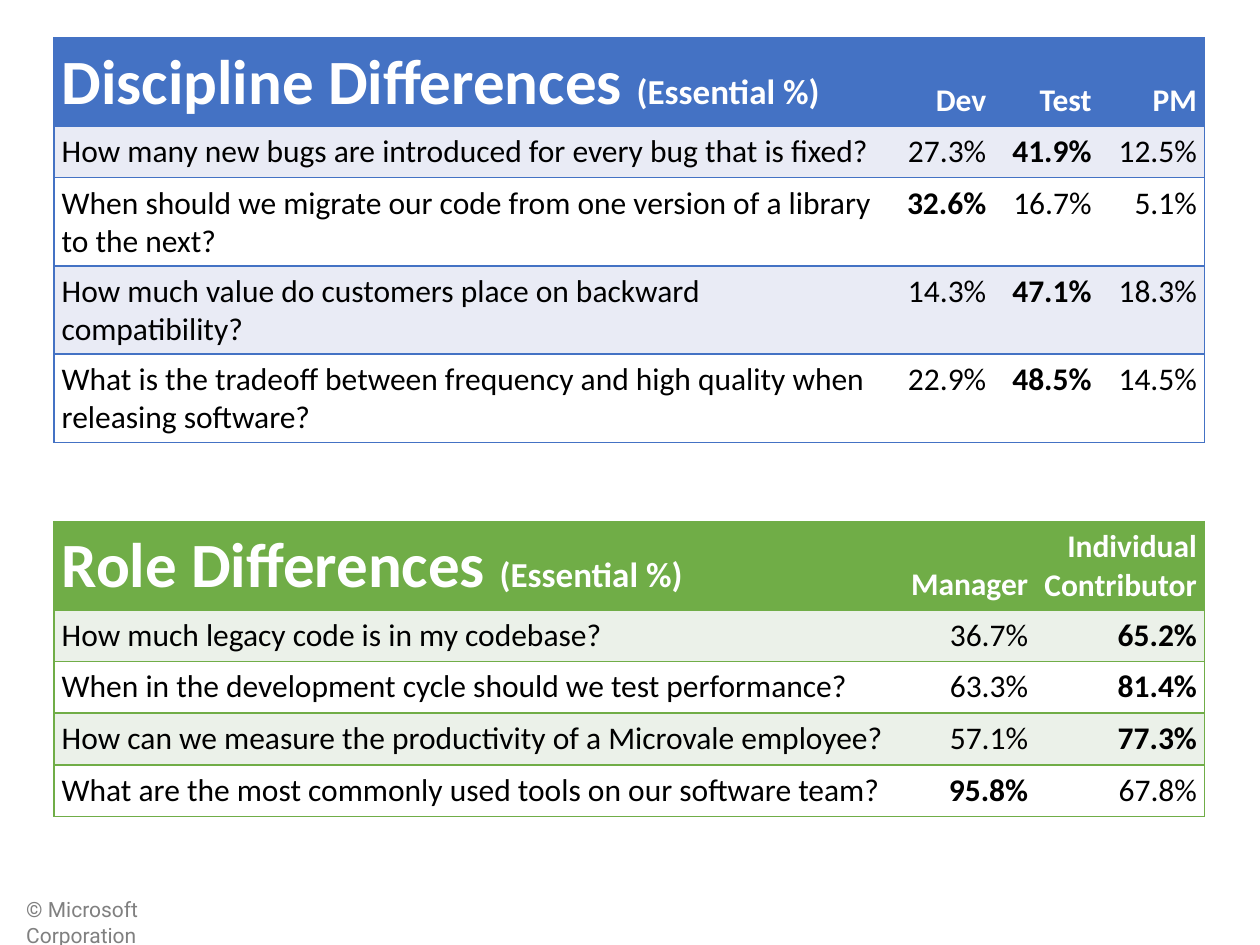
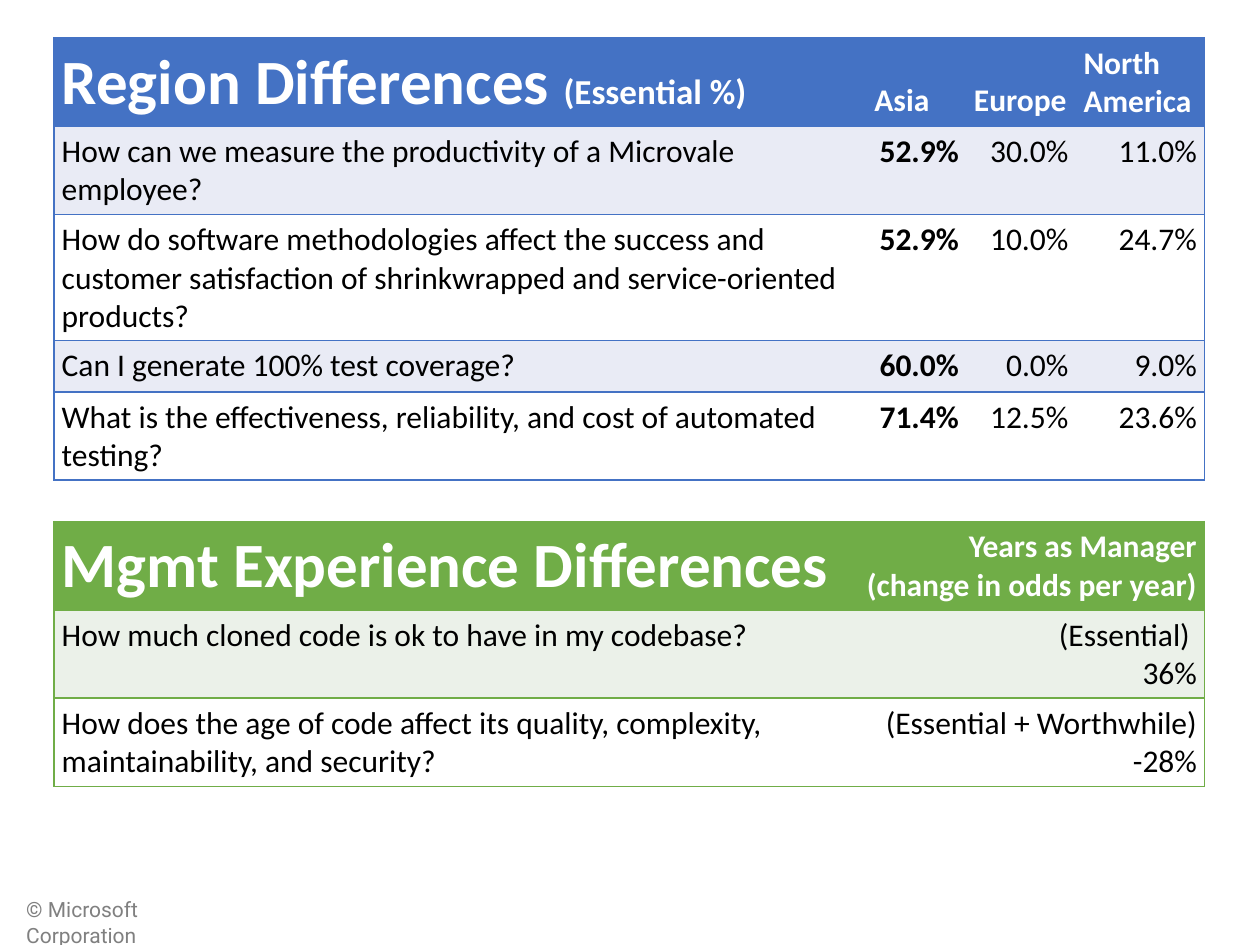
from dataclasses import dataclass

import pptx
import pptx.dml.color
import pptx.enum.text
import pptx.oxml.ns
import pptx.util
from lxml import etree

RGBColor = pptx.dml.color.RGBColor
Align = pptx.enum.text.PP_ALIGN
Anchor = pptx.enum.text.MSO_ANCHOR

BLUE, PALE_BLUE = RGBColor(0x44, 0x72, 0xC4), RGBColor(0xE9, 0xEB, 0xF5)
GREEN, PALE_GREEN = RGBColor(0x70, 0xAD, 0x47), RGBColor(0xEB, 0xF1, 0xE9)
WHITE, BLACK = RGBColor(0xFF, 0xFF, 0xFF), RGBColor(0, 0, 0)
GRAY = RGBColor(0x80, 0x80, 0x80)
TABLE_FONT, FOOTER_FONT = "Calibri", "Roboto"
TITLE_SIZE, UNIT_SIZE, TEXT_SIZE, FOOTER_SIZE = 36, 20, 18, 12

SLIDE_WIDTH, SLIDE_HEIGHT = pptx.util.Inches(10), pptx.util.Inches(7.5)
COLUMN, ROW = SLIDE_WIDTH / 100, SLIDE_HEIGHT / 75
TABLE_LEFT, TABLE_WIDTH = 4.3, 91.3
UPPER_TOP, LOWER_TOP = 3, 41.4
TEXT_ROW = 4.1
FOOTER_BOX = (1.1, 70.7, 19.8, 3)
ESSENTIAL = "(Essential %)"


@dataclass
class Theme:
    strong: RGBColor
    pale: RGBColor


UPPER, LOWER = Theme(BLUE, PALE_BLUE), Theme(GREEN, PALE_GREEN)


def on_grid(left, top, width, height):
    return (round(left * COLUMN), round(top * ROW),
            round(width * COLUMN), round(height * ROW))


def add_text(paragraph, text, size, color, bold=False, font=TABLE_FONT):
    """Add one run for each line of the text."""
    for number, line in enumerate(text.split("\n")):
        if number:
            paragraph.add_line_break()
        run = paragraph.add_run()
        run.text = line
        run.font.name = font
        run.font.size = pptx.util.Pt(size)
        run.font.bold = bold
        run.font.color.rgb = color


def set_borders(cell, color, sides):
    """Draw the named sides (L, R, T, B) and clear the others."""
    qn = pptx.oxml.ns.qn
    properties = cell._tc.get_or_add_tcPr()
    for side in "LRTB":
        line = etree.SubElement(properties, qn(f"a:ln{side}"), w=str(pptx.util.Pt(1)))
        if side in sides:
            fill = etree.SubElement(line, qn("a:solidFill"))
            etree.SubElement(fill, qn("a:srgbClr"), val=str(color))
        else:
            etree.SubElement(line, qn("a:noFill"))


def style_cell(cell, theme, row, column, last_column):
    sides = "TB" + "L" * (column == 0) + "R" * (column == last_column)
    set_borders(cell, theme.strong, sides)
    cell.fill.solid()
    cell.fill.fore_color.rgb = (
        theme.strong if row == 0 else theme.pale if row % 2 else WHITE)
    cell.margin_left = cell.margin_right = pptx.util.Inches(0.06)
    cell.margin_top = cell.margin_bottom = pptx.util.Inches(0.05)
    cell.vertical_anchor = Anchor.BOTTOM if row == 0 else Anchor.TOP


def largest(values):
    """Return the highest percentage, or None where there is nothing to compare."""
    if len(values) < 2:
        return None
    return max(values, key=lambda value: float(value.rstrip("%")))


def add_differences_table(slide, top, height, theme, title, unit, groups, widths,
                          questions, heading_align=Align.RIGHT):
    """Add a table of questions against groups, with the highest value in bold."""
    frame = slide.shapes.add_table(
        len(questions) + 1, len(groups) + 1,
        *on_grid(TABLE_LEFT, top, TABLE_WIDTH, height))
    table = frame.table
    table.horz_banding = False
    for column, width in zip(table.columns, [TABLE_WIDTH - sum(widths), *widths]):
        column.width = round(width * COLUMN)
    for row in table.rows:
        row.height = round(TEXT_ROW * ROW)
    frame.height = round(height * ROW)

    for row, (label, *values) in enumerate([(title, *groups), *questions]):
        heading = row == 0
        highest = None if heading else largest(values)
        for column, text in enumerate([label, *values]):
            cell = table.cell(row, column)
            style_cell(cell, theme, row, column, len(groups))
            paragraph = cell.text_frame.paragraphs[0]
            if column:
                paragraph.alignment = heading_align if heading else Align.RIGHT
            if heading and column == 0:
                add_text(paragraph, title + " " * bool(unit), TITLE_SIZE, WHITE, True)
                if unit:
                    add_text(paragraph, unit, UNIT_SIZE, WHITE, True)
            else:
                add_text(paragraph, text, TEXT_SIZE, WHITE if heading else BLACK,
                         heading or text == highest)


def add_footer(slide):
    text_frame = slide.shapes.add_textbox(*on_grid(*FOOTER_BOX)).text_frame
    text_frame.word_wrap = True
    add_text(text_frame.paragraphs[0], "© Microsoft Corporation", FOOTER_SIZE, GRAY,
             font=FOOTER_FONT)


def add_blank_slide(presentation):
    slide = presentation.slides.add_slide(presentation.slide_layouts[6])
    add_footer(slide)
    return slide


def add_discipline_and_role_slide(presentation):
    slide = add_blank_slide(presentation)
    add_differences_table(
        slide, UPPER_TOP, 32.1, UPPER, "Discipline Differences", ESSENTIAL,
        ["Dev", "Test", "PM"], [8.36] * 3,
        [("How many new bugs are introduced for every bug that is fixed?",
          "27.3%", "41.9%", "12.5%"),
         ("When should we migrate our code from one version of a library to the next?",
          "32.6%", "16.7%", "5.1%"),
         ("How much value do customers place on backward compatibility?",
          "14.3%", "47.1%", "18.3%"),
         ("What is the tradeoff between frequency and high quality when "
          "releasing software?", "22.9%", "48.5%", "14.5%")])
    add_differences_table(
        slide, LOWER_TOP, 23.2, LOWER, "Role Differences", ESSENTIAL,
        ["Manager", "Individual\nContributor"], [11, 13.4],
        [("How much legacy code is in my codebase?", "36.7%", "65.2%"),
         ("When in the development cycle should we test performance?",
          "63.3%", "81.4%"),
         ("How can we measure the productivity of a Microvale employee?",
          "57.1%", "77.3%"),
         ("What are the most commonly used tools on our software team?",
          "95.8%", "67.8%")])


def add_region_and_experience_slide(presentation):
    slide = add_blank_slide(presentation)
    add_differences_table(
        slide, UPPER_TOP, 35.1, UPPER, "Region Differences", ESSENTIAL,
        ["Asia", "Europe", "North America"], [7.9, 8.7, 10.2],
        [("How can we measure the productivity of a Microvale employee?",
          "52.9%", "30.0%", "11.0%"),
         ("How do software methodologies affect the success and customer satisfaction "
          "of shrinkwrapped and service-oriented products?",
          "52.9%", "10.0%", "24.7%"),
         ("Can I generate 100% test coverage?", "60.0%", "0.0%", "9.0%"),
         ("What is the effectiveness, reliability, and cost of automated testing?",
          "71.4%", "12.5%", "23.6%")],
        heading_align=Align.LEFT)
    add_differences_table(
        slide, LOWER_TOP, 21, LOWER, "Mgmt Experience Differences", "",
        ["Years as Manager\n(change in odds per year)"], [27.6],
        [("How much cloned code is ok to have in my codebase?", "(Essential) \n36%"),
         ("How does the age of code affect its quality, complexity, "
          "maintainability, and security?", "(Essential + Worthwhile)\n-28%")])


def main():
    presentation = pptx.Presentation()
    presentation.slide_width, presentation.slide_height = SLIDE_WIDTH, SLIDE_HEIGHT
    add_discipline_and_role_slide(presentation)
    add_region_and_experience_slide(presentation)
    presentation.save("out.pptx")


if __name__ == "__main__":
    main()
